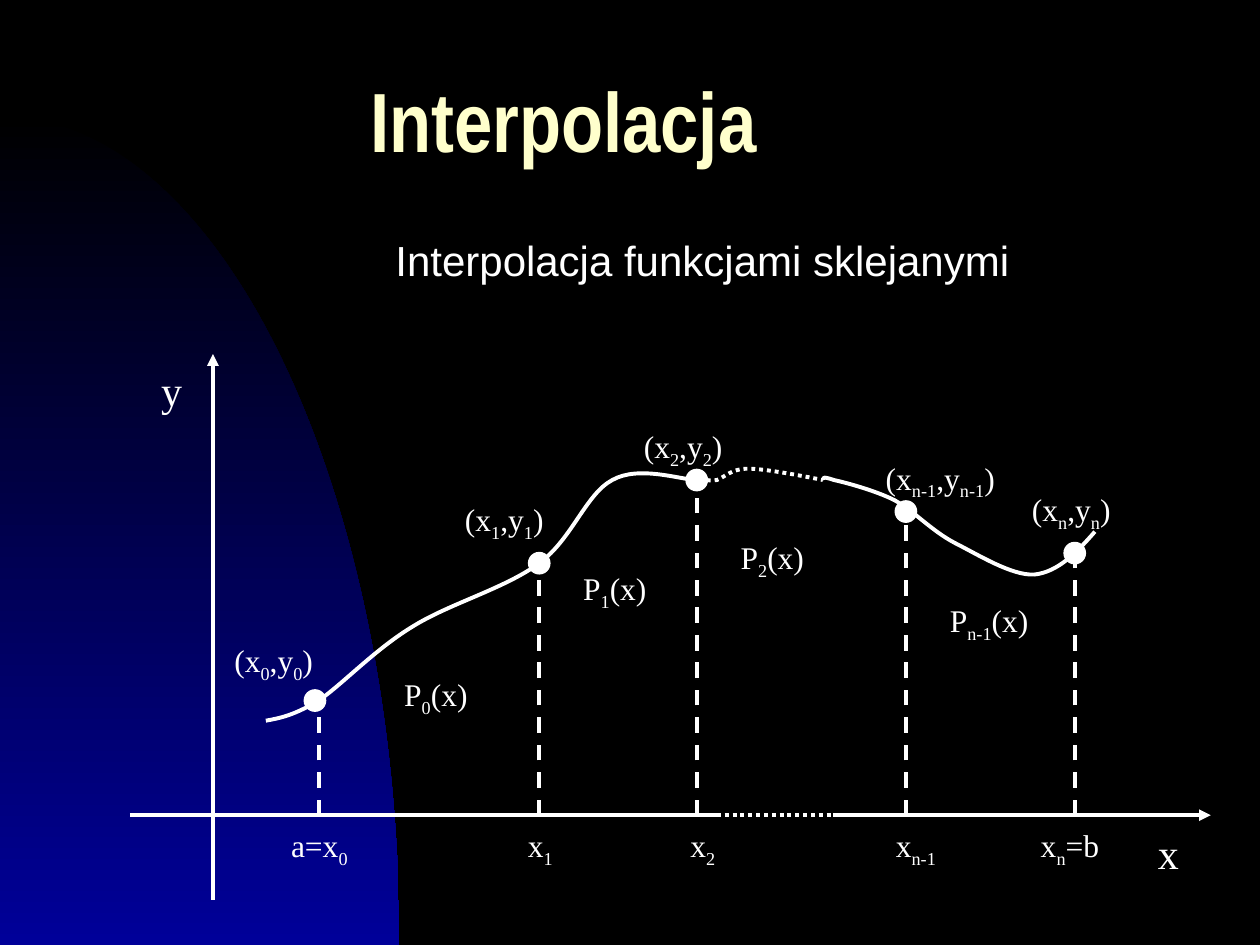
from pptx import Presentation
from pptx.dml.color import RGBColor
from pptx.enum.dml import MSO_LINE as Dash
from pptx.enum.shapes import MSO_CONNECTOR as Connector, MSO_SHAPE as Shape
from pptx.enum.text import MSO_ANCHOR as Anchor, MSO_AUTO_SIZE as AutoSize
from pptx.oxml.ns import qn
from pptx.util import Inches, Pt
from lxml.etree import SubElement

WHITE = "FFFFFF"
DOT_SIZE = 0.17


def color(value):
    return RGBColor.from_string(value)


def add_text(page, text, left, top, width, height, font="Times New Roman", size=18,
             fill=WHITE, bold=False, inset=0, spacing=None, anchor=Anchor.TOP, grow=True):
    box = page.shapes.add_textbox(Inches(left), Inches(top), Inches(width), Inches(height))
    frame = box.text_frame
    frame.word_wrap = True
    frame.vertical_anchor = anchor
    frame.auto_size = AutoSize.SHAPE_TO_FIT_TEXT if grow else AutoSize.NONE
    frame.margin_left = frame.margin_right = Inches(inset)
    frame.margin_top = frame.margin_bottom = Inches(inset / 2)
    para = frame.paragraphs[0]
    if spacing:
        para.line_spacing = spacing
    for index, part in enumerate(text.split("|")):
        span = para.add_run()
        span.text = part
        span.font.name = font
        span.font.size = Pt(size)
        span.font.bold = bold
        span.font.color.rgb = color(fill)
        if index % 2:
            span._r.get_or_add_rPr().set("baseline", "-25000")


def style_line(line, dash=None, width=2.25):
    line.color.rgb = color(WHITE)
    line.width = Pt(width)
    if dash:
        line.dash_style = dash


def add_line(page, start, end, dash=None, arrow=False):
    ends = [Inches(value) for value in (*start, *end)]
    connector = page.shapes.add_connector(Connector.STRAIGHT, *ends)
    style_line(connector.line, dash)
    if arrow:
        SubElement(connector.line._get_or_add_ln(), qn("a:tailEnd"), type="triangle")
    SubElement(connector._element.spPr, qn("a:effectLst"))


def add_outline(page, knots, left, top, corners=(), close=False):
    places = [(Inches(left + x), Inches(top + y)) for x, y in (*knots, *corners)]
    builder = page.shapes.build_freeform(*places[0])
    builder.add_line_segments(places[1:], close=close)
    shape = builder.convert_to_shape()
    shape.shadow.inherit = False
    segments = list(shape._element.iter(qn("a:lnTo")))[:len(knots) - 1]
    for first in range(0, len(segments), 3):
        bend, *others = segments[first:first + 3]
        cubic = bend.makeelement(qn("a:cubicBezTo"))
        bend.addprevious(cubic)
        for segment in (bend, *others):
            cubic.append(segment[0])
            segment.getparent().remove(segment)
    return shape


def add_curve(page, knots, left, top, dash=None):
    curve = add_outline(page, knots, left, top)
    curve.fill.background()
    style_line(curve.line, dash)


def add_backdrop(page, left, top, width, height):
    page.background.fill.solid()
    page.background.fill.fore_color.rgb = color("000000")
    arc = [(0, 0), (width * 0.55, 0), (width, height * 0.45), (width, height)]
    glow = add_outline(page, arc, left, top, corners=[(0, height)], close=True)
    glow.fill.gradient()
    glow.fill.gradient_angle = 270
    for stop, value in zip(glow.fill.gradient_stops, ("000000", "000099")):
        stop.color.rgb = color(value)
    glow.line.fill.background()


def add_heading(page, left, top, width, height):
    add_text(page, "Interpolacja", left, top, width, height, font="Arial Narrow", size=48,
             fill="FFFFCC", bold=True, inset=0.1, spacing=0.7, anchor=Anchor.MIDDLE, grow=False)


def add_subtitle(page, left, top, width, height):
    add_text(page, "Interpolacja funkcjami sklejanymi", left, top, width, height,
             font="Arial", size=24, inset=0.1, spacing=1.25, grow=False)


def add_axes(page, left, top, width, height):
    base = top + 3.97
    origin = left + 0.69
    gap_start, gap_end = left + 4.69, left + 5.61
    add_line(page, (origin, top + height), (origin, top + 0.31), arrow=True)
    add_line(page, (left + 0.03, base), (gap_start, base))
    add_line(page, (gap_start, base), (gap_end, base), Dash.ROUND_DOT)
    add_line(page, (gap_end, base), (left + width, base), arrow=True)
    add_text(page, "x", left + 8.19, top + 4.07, 0.33, 0.4, size=24)
    add_text(page, "y", left + 0.28, top + 0.39, 0.33, 0.4, size=24)


def add_spline(page, left, top):
    add_curve(page, [(4.61, 1.31), (4.62, 1.31), (4.64, 1.32), (4.69, 1.31),
                     (4.75, 1.29), (4.8, 1.22), (4.94, 1.22),
                     (5.08, 1.22), (5.43, 1.29), (5.53, 1.31)], left, top, Dash.ROUND_DOT)
    add_curve(page, [(5.54, 1.31), (5.53, 1.29), (5.53, 1.28), (5.62, 1.31),
                     (5.71, 1.33), (5.94, 1.39), (6.1, 1.47),
                     (6.26, 1.56), (6.39, 1.71), (6.58, 1.81),
                     (6.76, 1.9), (7.03, 2.07), (7.21, 2.06),
                     (7.4, 2.04), (7.55, 1.88), (7.69, 1.72)], left, top)
    add_curve(page, [(1.11, 3.22), (1.22, 3.2), (1.33, 3.18), (1.53, 3.06),
                     (1.72, 2.93), (1.98, 2.65), (2.28, 2.47),
                     (2.57, 2.29), (3.01, 2.17), (3.28, 1.97),
                     (3.54, 1.78), (3.65, 1.42), (3.86, 1.31),
                     (4.07, 1.19), (4.41, 1.31), (4.53, 1.31)], left, top)


def add_nodes(page, left, top):
    nodes = [(1.53, 1.5, 3.06), (3.28, 3.28, 1.97), (4.53, 4.53, 1.31),
             (6.19, 6.19, 1.56), (7.53, 7.53, 1.89)]
    for tick_x, dot_x, y in nodes:
        add_line(page, (left + tick_x, top + 3.97), (left + tick_x, top + y), Dash.DASH)
        dot = page.shapes.add_shape(
            Shape.OVAL, Inches(left + dot_x - DOT_SIZE / 2), Inches(top + y - DOT_SIZE / 2),
            Inches(DOT_SIZE), Inches(DOT_SIZE))
        dot.shadow.inherit = False
        dot.fill.solid()
        dot.fill.fore_color.rgb = color(WHITE)
        style_line(dot.line, width=0.75)


def add_labels(page, left, top):
    ticks = [("a=x|0", 1.31, 0.58), ("x|1", 3.19, 0.25), ("x|2", 4.48, 0.25),
             ("x|n-1", 6.11, 0.42), ("x|n|=b", 7.26, 0.55)]
    for text, x, width in ticks:
        add_text(page, text, left + x, top + 4.06, width, 0.3)
    points = [("0", 0.86, 2.59, 0.75), ("1", 2.69, 1.47, 0.75), ("2", 4.11, 0.89, 0.75),
              ("n-1", 6.03, 1.14, 1), ("n", 7.19, 1.39, 1)]
    for index, x, y, width in points:
        add_text(page, f"(x|{index}|,y|{index}|)", left + x, top + y, width, 0.3)
    pieces = [("0", 2.11, 2.81, 0.83), ("1", 3.53, 1.97, 0.83),
              ("2", 4.78, 1.72, 0.83), ("n-1", 6.44, 2.22, 1)]
    for index, x, y, width in pieces:
        add_text(page, f"P|{index}|(x)", left + x, top + y, width, 0.4, inset=0.1)


def add_graph(page, left, top, width, height):
    add_axes(page, left, top, width, height)
    add_spline(page, left, top)
    add_nodes(page, left, top)
    add_labels(page, left, top)


def main():
    deck = Presentation()
    deck.slide_width, deck.slide_height = Inches(10), Inches(7.5)
    page = deck.slides.add_slide(deck.slide_layouts[6])
    add_backdrop(page, 0, 0.92, 3.17, 6.58)
    add_heading(page, 2.84, 0.42, 6.67, 1.25)
    add_subtitle(page, 3.04, 1.71, 6.67, 4.5)
    add_graph(page, 1, 2.5, 8.61, 4.64)
    deck.save("out.pptx")


if __name__ == "__main__":
    main()
